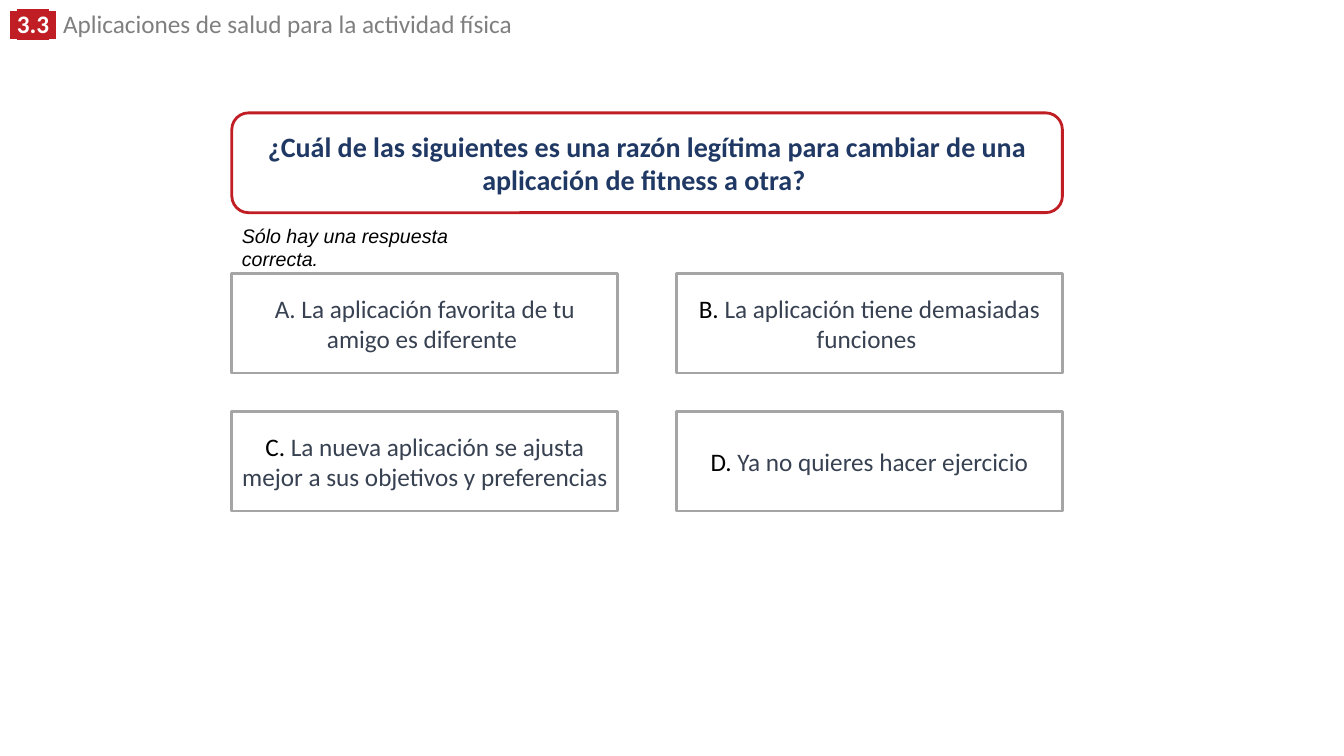
from dataclasses import dataclass

from lxml.etree import SubElement
from pptx import Presentation
from pptx.dml.color import RGBColor
from pptx.enum.shapes import MSO_SHAPE as Shape
from pptx.enum.text import MSO_ANCHOR as Anchor, MSO_AUTO_SIZE as AutoSize, PP_ALIGN as Align
from pptx.oxml.ns import qn
from pptx.util import Inches, Pt


@dataclass(frozen=True)
class Theme:
    white: str = "FFFFFF"
    black: str = "000000"
    red: str = "C01E24"
    navy: str = "203864"
    slate: str = "374151"
    grey: str = "7F7F7F"
    border: str = "A5A5A5"
    body_font: str = "Calibri"
    note_font: str = "Arial"
    question_size: int = 20
    body_size: int = 18
    note_size: int = 14
    line_width: int = 2


class QuizSlide:
    """Places elements on one slide; lengths are percentages of its size."""

    def __init__(self, presentation, theme):
        self.theme = theme
        self.width = presentation.slide_width
        self.height = presentation.slide_height
        self.slide = presentation.slides.add_slide(presentation.slide_layouts[6])

    def area(self, left, top, width, height):
        return (round(self.width * left / 100), round(self.height * top / 100),
                round(self.width * width / 100), round(self.height * height / 100))

    def run(self, paragraph, text, color, size=None, font=None,
            bold=False, italic=False, highlight=None):
        run = paragraph.add_run()
        run.text = text
        run.font.size = Pt(size or self.theme.body_size)
        run.font.name = font or self.theme.body_font
        run.font.bold = bold
        run.font.italic = italic
        run.font.color.rgb = RGBColor.from_string(color)
        if highlight:
            properties = run.font._element
            mark = SubElement(properties, qn("a:highlight"))
            SubElement(mark, qn("a:srgbClr"), val=highlight)
            properties.find(qn("a:solidFill")).addnext(mark)

    def text(self, area):
        """Add a text box and return its first paragraph."""
        frame = self.slide.shapes.add_textbox(*self.area(*area)).text_frame
        frame.word_wrap = True
        frame.auto_size = AutoSize.SHAPE_TO_FIT_TEXT
        return frame.paragraphs[0]

    def panel(self, kind, area, border):
        """Add a white outlined shape and return its centred paragraph."""
        shape = self.slide.shapes.add_shape(kind, *self.area(*area))
        shape.shadow.inherit = False
        shape.fill.solid()
        shape.fill.fore_color.rgb = RGBColor.from_string(self.theme.white)
        shape.line.color.rgb = RGBColor.from_string(border)
        shape.line.width = Pt(self.theme.line_width)
        frame = shape.text_frame
        frame.word_wrap = True
        frame.vertical_anchor = Anchor.MIDDLE
        paragraph = frame.paragraphs[0]
        paragraph.alignment = Align.CENTER
        return paragraph

    def header(self, area, number, title):
        theme = self.theme
        paragraph = self.text(area)
        paragraph.line_spacing = 0.8
        for text, font in ((" ", theme.note_font), (number, theme.body_font),
                           (" ", theme.note_font)):
            self.run(paragraph, text, theme.white, font=font, bold=True,
                     highlight=theme.red)
        self.run(paragraph, " ", theme.grey, font=theme.note_font)
        self.run(paragraph, title, theme.grey)

    def question(self, area, text):
        theme = self.theme
        paragraph = self.panel(Shape.ROUNDED_RECTANGLE, area, theme.red)
        self.run(paragraph, text, theme.navy, theme.question_size, bold=True)

    def note(self, area, text):
        theme = self.theme
        self.run(self.text(area), text, theme.black, theme.note_size,
                 theme.note_font, italic=True)

    def answer(self, area, letter, letter_color, text):
        paragraph = self.panel(Shape.RECTANGLE, area, self.theme.border)
        self.run(paragraph, f"{letter}. ", letter_color)
        self.run(paragraph, text, self.theme.slate)


def main():
    presentation = Presentation()
    presentation.slide_width = Inches(13.33)
    presentation.slide_height = Inches(7.5)
    theme = Theme()
    quiz = QuizSlide(presentation, theme)

    left, total_width, panel_height = 17.25, 61.8, 13.2
    column_gap, row_gap, answers_top = 4.35, 5.07, 36.13
    answer_width = (total_width - column_gap) / 2

    quiz.header((0, 1.2, 71.42, 4.53), "3.3",
                "Aplicaciones de salud para la actividad física")
    quiz.question((left, 14.93, total_width, panel_height),
                  "¿Cuál de las siguientes es una razón legítima para cambiar "
                  "de una aplicación de fitness a otra? ")
    quiz.note((left, 28.93, 17.7, 4.53), "Sólo hay una respuesta correcta.")

    answers = (
        ("A", theme.slate, "La aplicación favorita de tu amigo es diferente "),
        ("B", theme.black, "La aplicación tiene demasiadas funciones "),
        ("C", theme.black, "La nueva aplicación se ajusta mejor a sus objetivos y preferencias "),
        ("D", theme.black, "Ya no quieres hacer ejercicio"),
    )
    for index, answer in enumerate(answers):
        row, column = divmod(index, 2)
        quiz.answer((left + column * (answer_width + column_gap),
                     answers_top + row * (panel_height + row_gap),
                     answer_width, panel_height), *answer)

    presentation.save("out.pptx")


if __name__ == "__main__":
    main()
